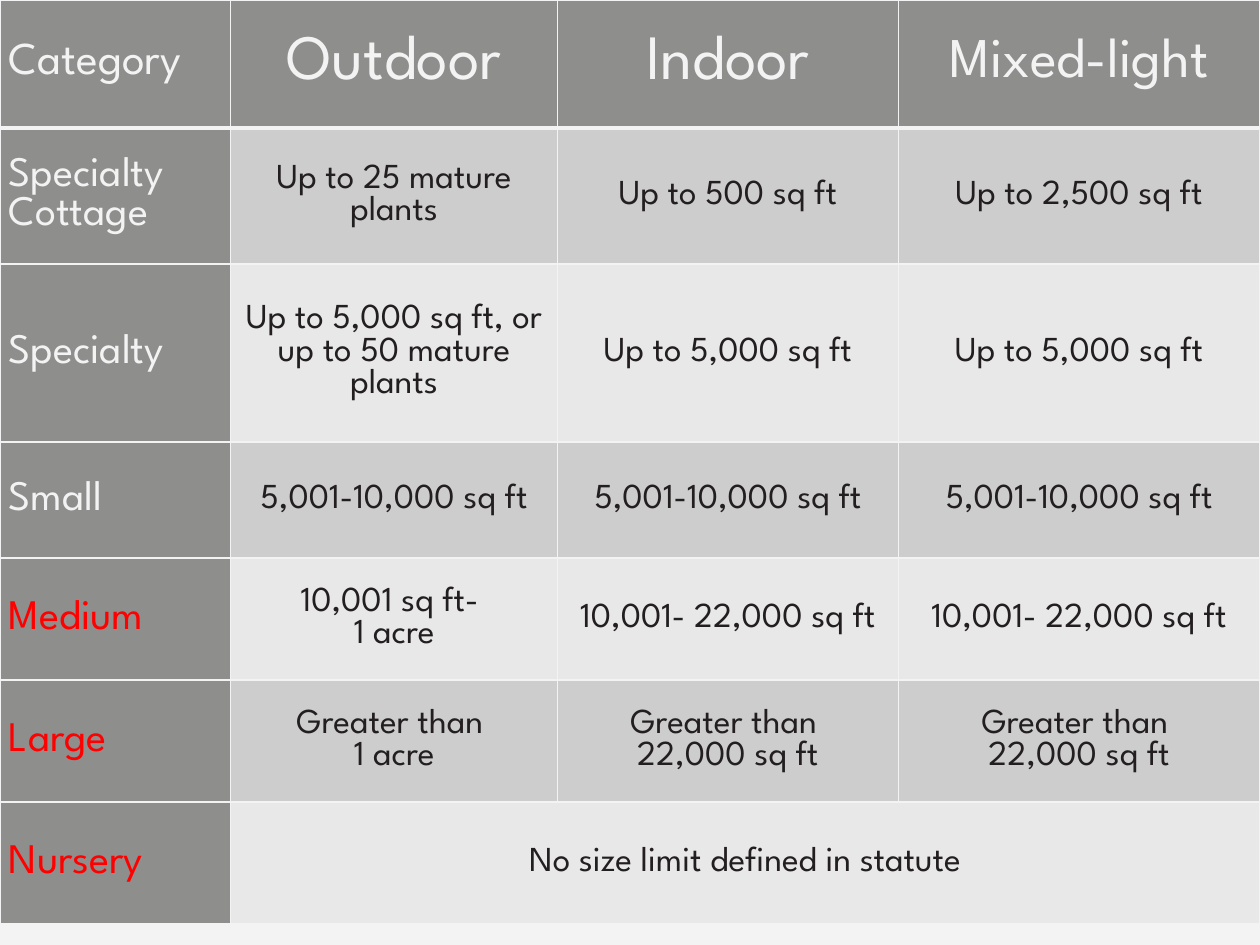
from dataclasses import dataclass

from lxml.etree import SubElement
from pptx import Presentation
from pptx.dml.color import RGBColor
from pptx.enum.text import MSO_ANCHOR, PP_ALIGN
from pptx.oxml.ns import qn
from pptx.util import Cm, Pt

# Content: each entry is one row, a line break starts a new paragraph
HEADINGS = ["Category", "Outdoor", "Indoor", "Mixed-light"]
LICENSES = [
    ["Specialty\nCottage", "Up to 25 mature plants", "Up to 500 sq ft", "Up to 2,500 sq ft"],
    ["Specialty", "Up to 5,000 sq ft, or up to 50 mature plants",
     "Up to 5,000 sq ft", "Up to 5,000 sq ft"],
    ["Small"] + ["5,001-10,000 sq ft"] * 3,
    ["Medium", "10,001 sq ft- \n1 acre"] + ["10,001- 22,000 sq ft"] * 2,
    ["Large", "Greater than \n1 acre"] + ["Greater than \n22,000 sq ft"] * 2,
    ["Nursery", "No size limit defined in statute"],
]
HIGHLIGHTED = {"Medium", "Large", "Nursery"}

COLUMN_WIDTHS = [4.65, 6.59, 6.87, 7.29]
ROW_HEIGHTS = [2.58, 2.74, 3.59, 2.34, 2.46, 2.46, 2.46]


@dataclass(frozen=True)
class Theme:
    font: str = "League Spartan"
    light: str = "F3F3F4"
    dark: str = "231F20"
    alert: str = "FF0000"
    header: str = "8E8E8C"
    bands: tuple = ("CDCDCD", "E8E8E8")
    heading_sizes: tuple = (26, 36, 36, 32)
    category_size: int = 24
    body_size: int = 20
    border: float = 1
    header_border: float = 3


THEME = Theme()


def set_borders(cell, bottom):
    properties = cell._tc.get_or_add_tcPr()
    for side in "LRTB":
        width = bottom if side == "B" else THEME.border
        line = SubElement(properties, qn(f"a:ln{side}"), w=str(Pt(width)))
        fill = SubElement(line, qn("a:solidFill"))
        SubElement(fill, qn("a:srgbClr"), val=THEME.light)


def fill_cell(cell, text, size, color, background, centered, bottom=THEME.border):
    set_borders(cell, bottom)
    cell.fill.solid()
    cell.fill.fore_color.rgb = RGBColor.from_string(background)
    cell.vertical_anchor = MSO_ANCHOR.MIDDLE
    cell.margin_left = cell.margin_right = Cm(0.18)
    cell.margin_top = cell.margin_bottom = 0
    cell.text_frame.text = text
    for paragraph in cell.text_frame.paragraphs:
        paragraph.alignment = PP_ALIGN.CENTER if centered else PP_ALIGN.LEFT
        paragraph.font.name = THEME.font
        paragraph.font.size = Pt(size)
        paragraph.font.color.rgb = RGBColor.from_string(color)


def main():
    deck = Presentation()
    deck.slide_width, deck.slide_height = Cm(25.4), Cm(19.05)
    page = deck.slides.add_slide(deck.slide_layouts[6])
    page.background.fill.solid()
    page.background.fill.fore_color.rgb = RGBColor.from_string(THEME.light)

    # Table grid
    table = page.shapes.add_table(
        len(ROW_HEIGHTS), len(COLUMN_WIDTHS), 0, 0,
        Cm(sum(COLUMN_WIDTHS)), Cm(sum(ROW_HEIGHTS))).table
    table.first_row = table.horz_banding = False
    for column, width in zip(table.columns, COLUMN_WIDTHS):
        column.width = Cm(width)
    for row, height in zip(table.rows, ROW_HEIGHTS):
        row.height = Cm(height)

    # Heading row
    for index, (heading, size) in enumerate(zip(HEADINGS, THEME.heading_sizes)):
        fill_cell(table.cell(0, index), heading, size, THEME.light, THEME.header,
                  centered=index > 0, bottom=THEME.header_border)

    # License rows; a short row spreads its last entry over the remaining columns
    last = len(HEADINGS) - 1
    for number, (category, *limits) in enumerate(LICENSES, start=1):
        color = THEME.alert if category in HIGHLIGHTED else THEME.light
        fill_cell(table.cell(number, 0), category, THEME.category_size, color,
                  THEME.header, centered=False)
        band = THEME.bands[(number - 1) % 2]
        for index, limit in enumerate(limits, start=1):
            fill_cell(table.cell(number, index), limit, THEME.body_size, THEME.dark,
                      band, centered=True)
        if len(limits) < last:
            table.cell(number, len(limits)).merge(table.cell(number, last))

    deck.save("out.pptx")


if __name__ == "__main__":
    main()
